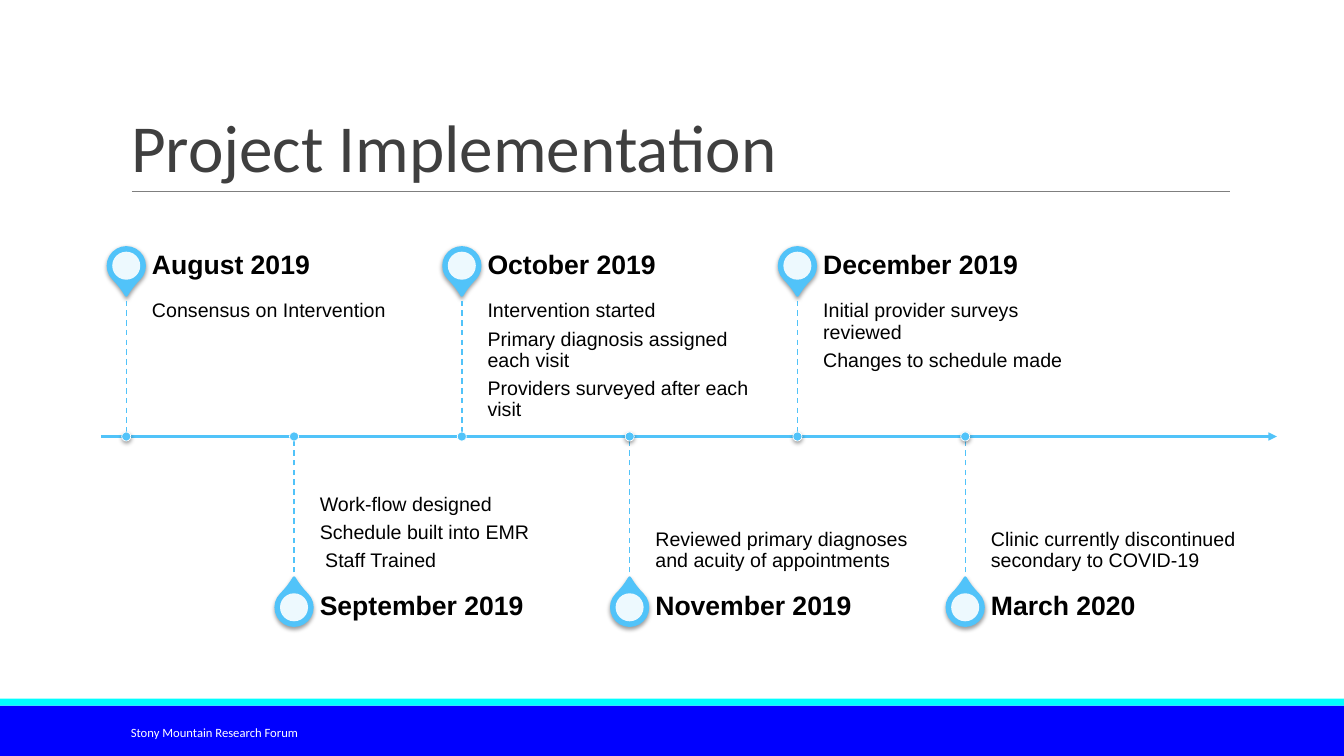
from dataclasses import dataclass

from lxml import etree
from pptx import Presentation
from pptx.dml.color import RGBColor
from pptx.enum.dml import MSO_LINE
from pptx.enum.shapes import MSO_CONNECTOR, MSO_SHAPE
from pptx.enum.text import MSO_ANCHOR, MSO_AUTO_SIZE, PP_ALIGN
from pptx.oxml.ns import qn
from pptx.util import Pt

TOP, MIDDLE, BOTTOM = MSO_ANCHOR.TOP, MSO_ANCHOR.MIDDLE, MSO_ANCHOR.BOTTOM
RECT, OVAL, TEARDROP = MSO_SHAPE.RECTANGLE, MSO_SHAPE.OVAL, MSO_SHAPE.TEAR
STRAIGHT, DASH = MSO_CONNECTOR.STRAIGHT, MSO_LINE.DASH
LEFT, NO_FIT = PP_ALIGN.LEFT, MSO_AUTO_SIZE.NONE


@dataclass(frozen=True)
class Theme:
    accent: str = "51C3F9"
    band: str = "0000FF"
    band_edge: str = "00FFFF"
    rule: str = "7F7F7F"
    title: str = "3F3F3F"
    text: str = "000000"
    white: str = "FFFFFF"
    shadow: str = "000000"
    heading_font: str = "Calibri"
    body_font: str = "Arial"
    title_size: float = 48
    date_size: float = 19
    detail_size: float = 14
    footer_size: float = 9


class TimelineSlide:
    def __init__(self, slide, theme):
        self.slide = slide
        self.theme = theme

    def format_text(self, frame, lines, font, size, color, bold=False,
                    anchor=MIDDLE, insets=(7.2, 3.6, 7.2, 3.6), spacing=1.0, after=0):
        frame.word_wrap = True
        frame.auto_size = NO_FIT
        frame.vertical_anchor = anchor
        (frame.margin_left, frame.margin_top,
         frame.margin_right, frame.margin_bottom) = map(Pt, insets)
        frame.text = "\n".join(lines)
        for paragraph in frame.paragraphs:
            paragraph.alignment = LEFT
            paragraph.line_spacing = spacing
            paragraph.space_after = Pt(after)
            for run in paragraph.runs:
                run.font.name = font
                run.font.size = Pt(size)
                run.font.bold = bold
                run.font.color.rgb = RGBColor.from_string(color)

    def title(self, text, box):
        heading = self.slide.shapes.title
        heading.left, heading.top, heading.width, heading.height = map(Pt, box)
        self.format_text(heading.text_frame, [text], self.theme.heading_font,
                         self.theme.title_size, self.theme.title,
                         anchor=BOTTOM, spacing=0.85)

    def text(self, lines, box, font, size, color, **options):
        textbox = self.slide.shapes.add_textbox(*map(Pt, box))
        self.format_text(textbox.text_frame, lines, font, size, color, **options)

    def shape(self, kind, box, fill, outline=None, width=0, alpha=None, shadow=False):
        shape = self.slide.shapes.add_shape(kind, *map(Pt, box))
        shape.fill.solid()
        shape.fill.fore_color.rgb = RGBColor.from_string(fill)
        if outline:
            shape.line.color.rgb = RGBColor.from_string(outline)
            shape.line.width = Pt(width)
        else:
            shape.line.fill.background()
        shape.shadow.inherit = False
        properties = shape._element.spPr
        if alpha:
            color = properties.find(qn("a:solidFill")).find(qn("a:srgbClr"))
            etree.SubElement(color, qn("a:alpha"), val=str(alpha * 1000))
        if shadow:
            effects = properties.find(qn("a:effectLst"))
            outer = etree.SubElement(effects, qn("a:outerShdw"), blurRad=str(Pt(3.1)),
                                     dist=str(Pt(1.6)), dir="5400000", rotWithShape="0")
            color = etree.SubElement(outer, qn("a:srgbClr"), val=self.theme.shadow)
            etree.SubElement(color, qn("a:alpha"), val="38000")
        return shape

    def circle(self, x, y, size, fill, **options):
        self.shape(OVAL, (x - size / 2, y - size / 2, size, size), fill, **options)

    def line(self, start, end, color, width, dash=None, arrow=False):
        connector = self.slide.shapes.add_connector(STRAIGHT, *map(Pt, start + end))
        connector.line.color.rgb = RGBColor.from_string(color)
        connector.line.width = Pt(width)
        if dash:
            connector.line.dash_style = dash
        properties = connector._element.spPr
        if arrow:
            etree.SubElement(properties.find(qn("a:ln")), qn("a:tailEnd"), type="triangle")
        etree.SubElement(properties, qn("a:effectLst"))

    def pin(self, x, y, rotation):
        size = 26
        drop = self.shape(TEARDROP, (x - size / 2, y - size / 2, size, size),
                          self.theme.accent, self.theme.accent, 2, shadow=True)
        drop.adjustments[0] = 1.15
        drop.rotation = rotation
        self.circle(x, y, 20, self.theme.white, alpha=90)

    def milestone(self, x, axis_y, above, date, details, dot_shadow):
        theme = self.theme
        stem, date_height, text_width = 104, 36, 199.5
        text_x = x + 18.4
        if above:
            stem_end = axis_y - stem
            date_top, detail_top = stem_end - date_height, stem_end
            rotation, anchor, insets = 135, TOP, (0, 7.2, 7.2, 10.8)
        else:
            stem_end = axis_y + stem
            date_top, detail_top = stem_end, axis_y
            rotation, anchor, insets = 315, BOTTOM, (0, 10.8, 0, 7.2)
        self.pin(x, date_top + date_height / 2, rotation)
        self.text(details, (text_x, detail_top, text_width, stem), theme.body_font,
                  theme.detail_size, theme.text, anchor=anchor, insets=insets,
                  spacing=0.9, after=5)
        self.text([date], (text_x, date_top, text_width, date_height), theme.body_font,
                  theme.date_size, theme.text, bold=True, insets=(0, 0, 9.4, 0),
                  spacing=0.9)
        self.line((x, stem_end), (x, axis_y), theme.accent, 1, dash=DASH)
        self.circle(x, axis_y, 6.5, theme.accent, outline=theme.white, width=0.5,
                    shadow=dot_shadow)


# Date, details, whether the dot on the axis casts a shadow
MILESTONES = [
    ("August 2019", ["Consensus on Intervention"], True),
    ("September 2019", ["Work-flow designed", "Schedule built into EMR",
                        " Staff Trained"], False),
    ("October 2019", ["Intervention started", "Primary diagnosis assigned each visit",
                      "Providers surveyed after each visit"], False),
    ("November 2019", ["Reviewed primary diagnoses and acuity of appointments"], True),
    ("December 2019", ["Initial provider surveys reviewed",
                       "Changes to schedule made"], True),
    ("March 2020", ["Clinic currently discontinued secondary to COVID-19"], True),
]


def main():
    deck = Presentation()
    deck.slide_width, deck.slide_height = Pt(960), Pt(540)
    theme = Theme()
    page = TimelineSlide(deck.slides.add_slide(deck.slide_layouts[5]), theme)

    # Footer band and title
    page.shape(RECT, (0, 504, 960, 36), theme.band)
    page.shape(RECT, (0, 499, 960, 5), theme.band_edge)
    page.line((94.3, 136.6), (878.9, 136.6), theme.rule, 0.75)
    page.title("Project Implementation", (86.4, 22.6, 792, 114.2))
    page.text(["Stony Mountain Research Forum"], (86.4, 508.5, 194.4, 28.8),
              theme.heading_font, theme.footer_size, theme.white)

    # Timeline: milestones alternate above and below the axis
    axis_y, first_x, step = 311.8, 90.2, 119.85
    page.line((72, axis_y), (912, axis_y), theme.accent, 1.5, arrow=True)
    for index, (date, details, dot_shadow) in enumerate(MILESTONES):
        page.milestone(first_x + index * step, axis_y, index % 2 == 0,
                       date, details, dot_shadow)

    deck.save("out.pptx")


if __name__ == "__main__":
    main()
